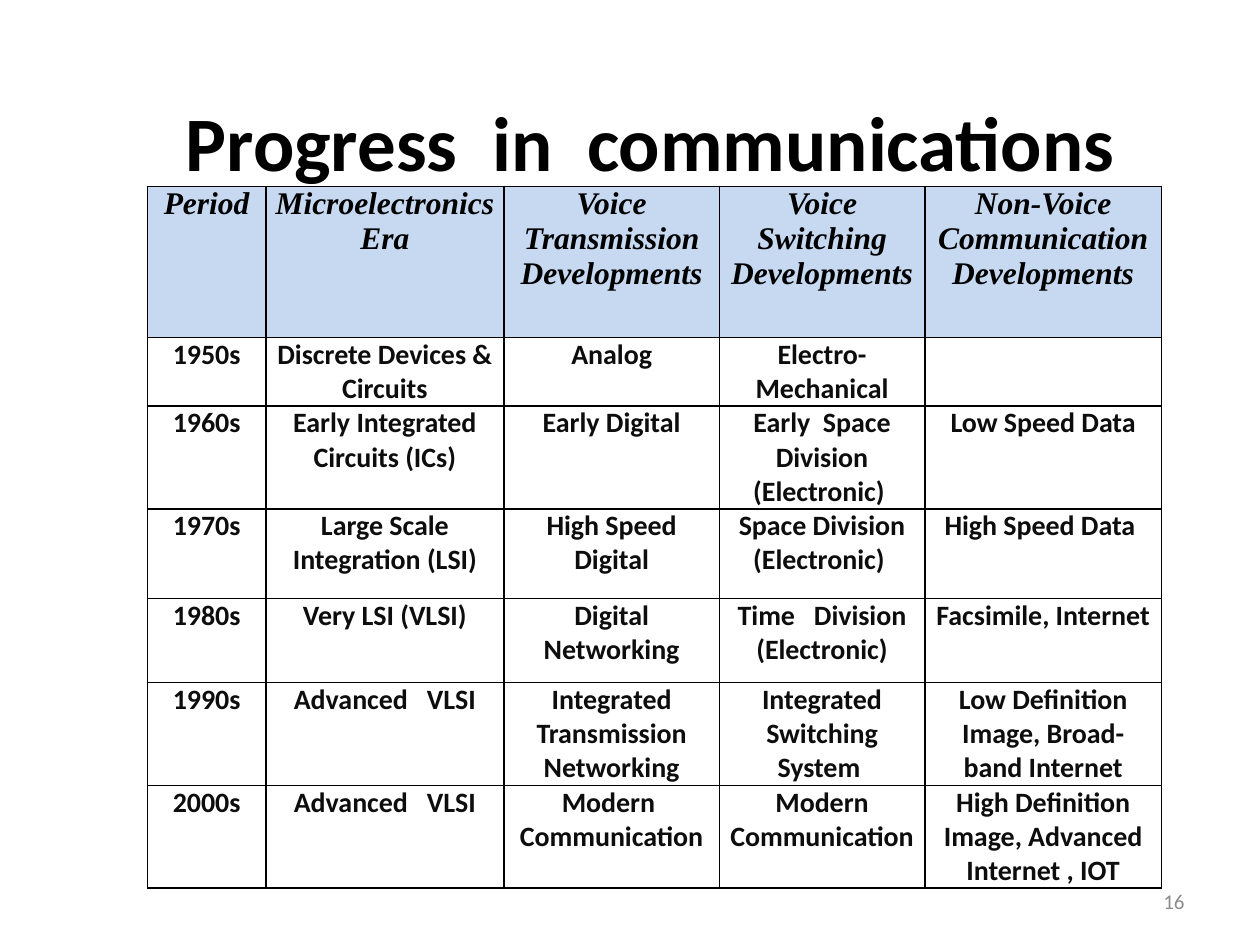
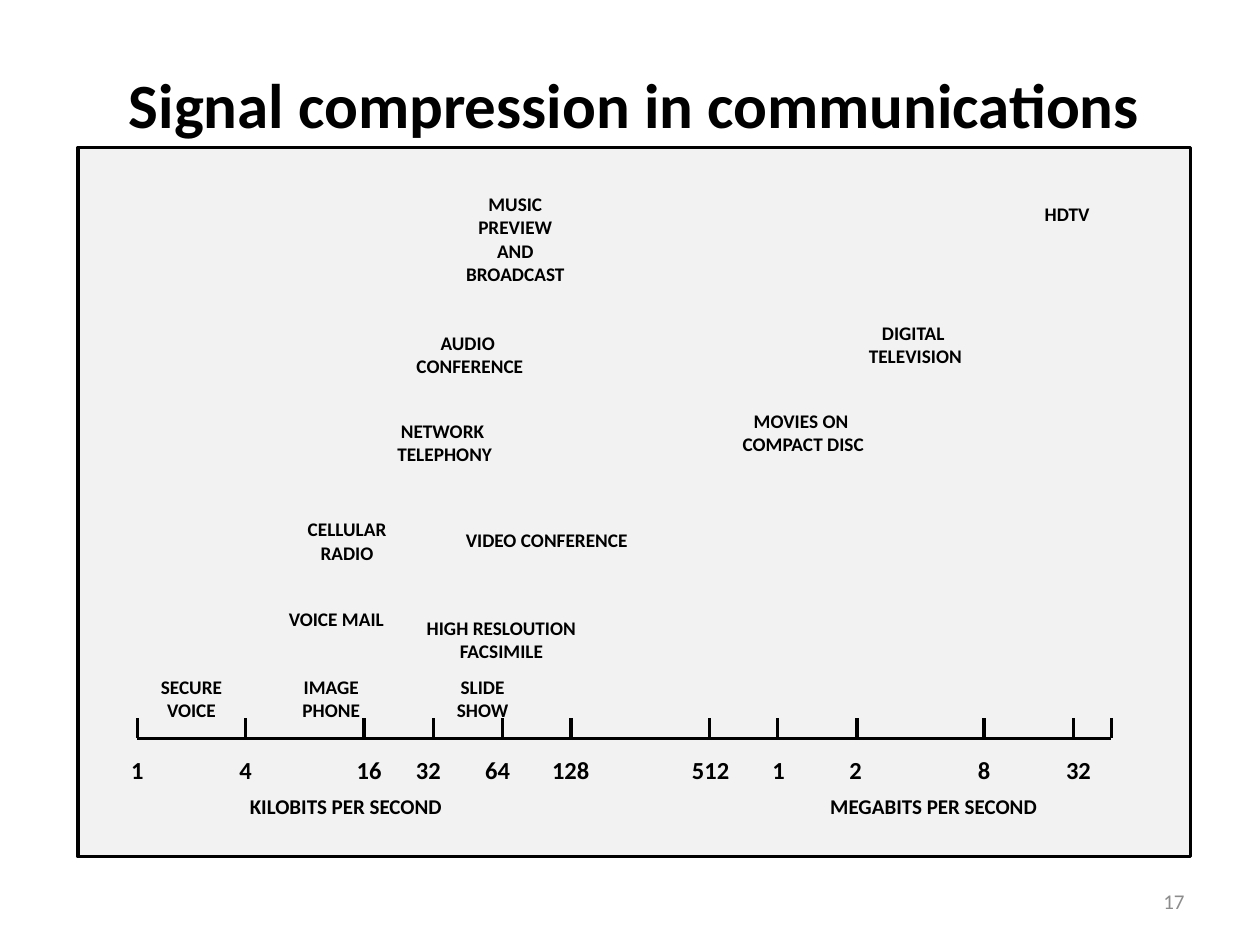
from dataclasses import dataclass

from lxml import etree
from pptx import Presentation
from pptx.dml.color import RGBColor as Color
from pptx.enum.shapes import MSO_CONNECTOR as Connector, MSO_SHAPE as Shape
from pptx.enum.text import MSO_ANCHOR as Anchor, PP_ALIGN as Align
from pptx.oxml.ns import qn
from pptx.util import Inches, Pt


@dataclass(frozen=True)
class Theme:
    body_font: str = "Calibri"
    header_font: str = "Times New Roman"
    black: str = "000000"
    cell_text: str = "0D0D0D"
    number_gray: str = "8C8C8C"
    header_fill: str = "C6D9F1"
    panel_fill: str = "F2F2F2"
    header_size: int = 18
    cell_size: int = 16
    tick_size: int = 14
    unit_size: int = 12
    number_size: int = 12
    service_size: int = 11
    axis_width: int = 2
    border_width: int = 1


THEME = Theme()

# Progress table
COLUMN_WIDTHS = [0.94, 1.89, 1.71, 1.63, 1.88]
ROW_HEIGHTS = [1.2, 0.53, 0.8, 0.71, 0.67, 0.8, 0.8]
PROGRESS = [
    ["Period", "Microelectronics Era", "Voice Transmission Developments",
     "Voice Switching Developments", "Non-Voice Communication Developments"],
    ["1950s", "Discrete Devices & Circuits", "Analog", "Electro-Mechanical", ""],
    ["1960s", "Early Integrated Circuits (ICs)", "Early Digital",
     "Early  Space Division (Electronic) ", "Low Speed Data"],
    ["1970s", "Large Scale Integration (LSI)", "High Speed\nDigital",
     "Space Division (Electronic) ", "High Speed Data "],
    ["1980s", "Very LSI (VLSI)", "Digital Networking",
     "Time   Division (Electronic)", "Facsimile, Internet"],
    ["1990s", "Advanced   VLSI", "Integrated Transmission Networking",
     "Integrated Switching System ", "Low Definition Image, Broad- band Internet"],
    ["2000s", "Advanced   VLSI", "Modern  Communication", "Modern Communication",
     "High Definition Image, Advanced Internet , IOT"],
]

# Bit-rate axis: tick position, label, centre of the label
AXIS_Y = 5.86
TICK_HEIGHT = 0.16
TICKS = [
    (1.09, "1", 1.09), (1.95, "4", 1.95), (2.89, "16", 2.93),
    (3.44, "32", 3.4), (3.99, "64", 3.95), (4.53, "128", 4.53),
    (5.63, "512", 5.64), (6.17, "1", 6.18), (6.8, "2", 6.79),
    (7.81, "8", 7.81), (8.52, "32", 8.56), (8.82, "", 8.82),
]
UNITS = [(1.87, 1.75, "KILOBITS PER SECOND"), (6.48, 1.86, "MEGABITS PER SECOND")]

# Services: left, top, width, lines
SERVICES = [
    (1.17, 5.31, 0.7, "SECURE\nVOICE"),
    (2.3, 5.31, 0.66, "IMAGE\nPHONE"),
    (3.52, 5.31, 0.62, "SLIDE\nSHOW"),
    (2.19, 4.77, 0.96, "VOICE MAIL"),
    (3.28, 4.84, 1.4, "HIGH RESLOUTION\nFACSIMILE"),
    (2.34, 4.06, 0.83, "CELLULAR\nRADIO"),
    (3.59, 4.14, 1.5, "VIDEO CONFERENCE"),
    (3.05, 3.28, 0.96, "NETWORK \nTELEPHONY"),
    (5.78, 3.2, 1.19, "MOVIES ON \nCOMPACT DISC"),
    (3.2, 2.58, 1.06, "AUDIO \nCONFERENCE"),
    (6.79, 2.5, 0.95, "DIGITAL \nTELEVISION"),
    (3.59, 1.48, 1, "MUSIC\nPREVIEW\nAND\nBROADCAST"),
    (8.19, 1.56, 0.56, "HDTV"),
]


def write_text(frame, text, size, color=THEME.black, font=THEME.body_font,
               bold=True, italic=False, align=Align.CENTER):
    """Fill a text frame with one paragraph per line."""
    for index, line in enumerate(text.split("\n")):
        para = frame.add_paragraph() if index else frame.paragraphs[0]
        para.alignment = align
        span = para.add_run()
        span.text = line
        span.font.name = font
        span.font.size = Pt(size)
        span.font.bold = bold
        span.font.italic = italic
        span.font.color.rgb = Color.from_string(color)


def add_text(page, left, top, width, height, text, size, wrap=False,
             anchor=Anchor.TOP, **style):
    box = page.shapes.add_textbox(
        Inches(left), Inches(top), Inches(width), Inches(height))
    box.text_frame.word_wrap = wrap
    box.text_frame.vertical_anchor = anchor
    write_text(box.text_frame, text, size, **style)


def add_title(page, left, top, width, height, text, size):
    add_text(page, left, top, width, height, text, size, wrap=True)


def add_page_number(page, number):
    add_text(page, 7.17, 6.95, 2.33, 0.4, str(number), THEME.number_size,
             wrap=True, anchor=Anchor.MIDDLE, color=THEME.number_gray,
             bold=False, align=Align.RIGHT)


def add_line(page, x1, y1, x2, y2):
    line = page.shapes.add_connector(
        Connector.STRAIGHT, Inches(x1), Inches(y1), Inches(x2), Inches(y2))
    line.line.color.rgb = Color.from_string(THEME.black)
    line.line.width = Pt(THEME.axis_width)
    properties = line._element.find(qn("p:spPr"))
    etree.SubElement(properties, qn("a:effectLst"))


def add_panel(page, left, top, width, height):
    panel = page.shapes.add_shape(
        Shape.RECTANGLE, Inches(left), Inches(top), Inches(width), Inches(height))
    panel.shadow.inherit = False
    panel.fill.solid()
    panel.fill.fore_color.rgb = Color.from_string(THEME.panel_fill)
    panel.line.color.rgb = Color.from_string(THEME.black)
    panel.line.width = Pt(THEME.axis_width)


def add_borders(cell):
    """Draw the four edges; they must precede the fill in the cell's XML."""
    properties = cell._tc.get_or_add_tcPr()
    for index, side in enumerate(("lnL", "lnR", "lnT", "lnB")):
        edge = etree.Element(qn(f"a:{side}"), w=str(Pt(THEME.border_width)))
        fill = etree.SubElement(edge, qn("a:solidFill"))
        etree.SubElement(fill, qn("a:srgbClr"), val=THEME.black)
        properties.insert(index, edge)


def style_cell(cell, text, is_header):
    cell.margin_left = cell.margin_right = Inches(0.07)
    cell.margin_top = cell.margin_bottom = 0
    if is_header:
        cell.fill.solid()
        cell.fill.fore_color.rgb = Color.from_string(THEME.header_fill)
        write_text(cell.text_frame, text, THEME.header_size,
                   font=THEME.header_font, italic=True)
    else:
        cell.fill.background()
        if text:
            write_text(cell.text_frame, text, THEME.cell_size,
                       color=THEME.cell_text)
    add_borders(cell)


def add_progress_table(page, left, top):
    table = page.shapes.add_table(
        len(PROGRESS), len(COLUMN_WIDTHS), Inches(left), Inches(top),
        Inches(sum(COLUMN_WIDTHS)), Inches(sum(ROW_HEIGHTS))).table
    table.horz_banding = False
    for column, width in zip(table.columns, COLUMN_WIDTHS):
        column.width = Inches(width)
    for row_index, (row, height) in enumerate(zip(table.rows, ROW_HEIGHTS)):
        row.height = Inches(height)
        for cell, text in zip(row.cells, PROGRESS[row_index]):
            style_cell(cell, text, is_header=row_index == 0)


def add_rate_axis(page):
    add_line(page, TICKS[0][0], AXIS_Y, TICKS[-1][0], AXIS_Y)
    for x, label, centre in TICKS:
        add_line(page, x, AXIS_Y - TICK_HEIGHT, x, AXIS_Y)
        if label:
            width = 0.2 + 0.1 * len(label)
            add_text(page, centre - width / 2, 5.94, width, 0.34,
                     label, THEME.tick_size)
    for left, width, unit in UNITS:
        add_text(page, left, 6.25, width, 0.3, unit, THEME.unit_size)


def add_services(page):
    for left, top, width, text in SERVICES:
        height = 0.1 + 0.185 * len(text.split("\n"))
        add_text(page, left, top, width, height, text, THEME.service_size)


def build_progress_page(page):
    add_progress_table(page, 1.17, 1.48)
    add_title(page, 1, 0.7, 8.33, 1.14, "Progress  in  communications", 44)
    add_page_number(page, 16)


def build_compression_page(page):
    add_panel(page, 0.62, 1.17, 8.83, 5.63)
    add_rate_axis(page)
    add_services(page)
    add_title(page, 0.62, 0.47, 8.83, 0.71,
              "Signal compression in communications", 36)
    add_page_number(page, 17)


def main():
    deck = Presentation()
    deck.slide_width, deck.slide_height = Inches(10), Inches(7.5)
    blank = deck.slide_layouts[6]
    for build_page in (build_progress_page, build_compression_page):
        build_page(deck.slides.add_slide(blank))
    deck.save("out.pptx")


if __name__ == "__main__":
    main()
